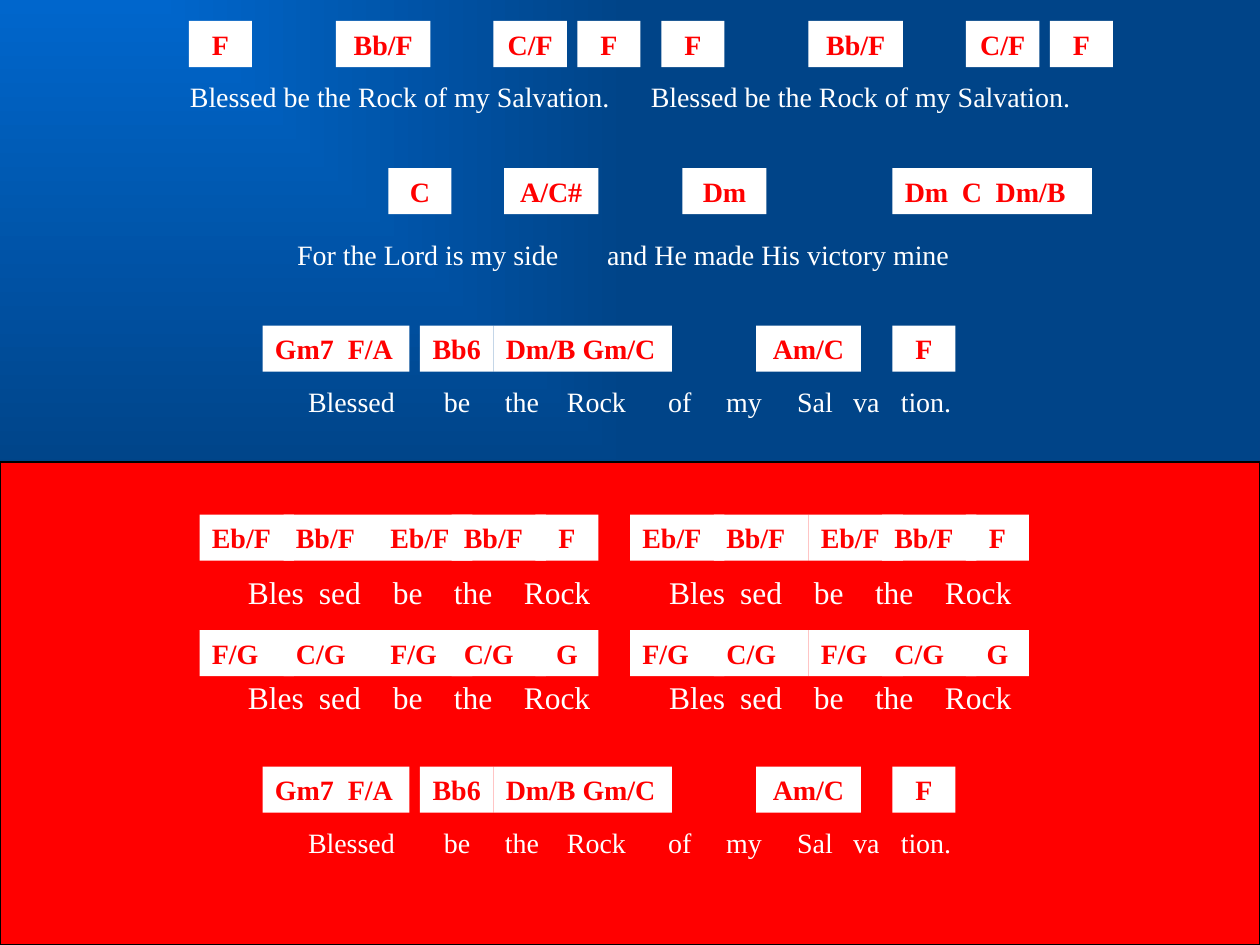
from lxml.etree import SubElement
from pptx import Presentation
from pptx.dml.color import RGBColor
from pptx.enum.shapes import MSO_SHAPE
from pptx.enum.text import MSO_ANCHOR, MSO_AUTO_SIZE, PP_ALIGN
from pptx.oxml.ns import qn
from pptx.util import Cm, Pt

FONT = "Times New Roman"
RED, WHITE, BLACK = "FF0000", "FFFFFF", "000000"
SKY, NAVY = "0066CC", "004488"
UNIT = 2.54 / 12
INSET = 0.25
LEFT, MID = PP_ALIGN.LEFT, PP_ALIGN.CENTER

BLESS = "Blessed be the Rock of my Salvation."
OPEN = [("F", 18, 6, MID), ("Bb/F", 32, 9, MID), ("C/F", 47, 7, MID), ("F", 55, 6, MID)]
LORD = [("C", 37, 6, MID), ("A/C#", 48, 9, MID), ("Dm", 65, 8, MID),
        ("Dm\tC\tDm/B", 85, 19, LEFT, 1.15, 1.83)]
CLOSE = [("Gm7\tF/A", 25, 14, LEFT, 1.47), ("Bb6", 40, 7, MID),
         ("Dm/B Gm/C", 47, 17, LEFT), ("Am/C", 72, 10, MID), ("F", 85, 6, MID)]
END = [("Blessed", 6.21), ("be", 8.95), ("the", 10.18), ("Rock", 11.43), ("of", 13.47),
       ("my", 14.64), ("Sal", 16.07), ("va", 17.2), ("tion.", 18.16)]
ROCK = [("Bles", 5), ("sed", 6.43), ("be", 7.92), ("the", 9.15), ("Rock", 10.56)]


def twice(row, step):
    return row + [(item[0], item[1] + step, *item[2:]) for item in row]


def vamp(one, two, last):
    row = [(one, 19, 9, LEFT), (two, 27, 9, LEFT), (one, 36, 9, LEFT),
           (two, 43, 9, LEFT), (last, 51, 6, MID)]
    return twice(row, 41)


ROCKS = twice(ROCK, 8.49)
LINES = [
    (2, twice(OPEN, 45), 7, 16, [(BLESS, 3.83), (BLESS, 13.12)]),
    (16, LORD, 22, 16, [("For the Lord is my side", 5.99),
                        ("and He made His victory mine", 12.24)]),
    (31, CLOSE, 36, 16, END),
    (49, vamp("Eb/F", "Bb/F", "F"), 54, 18, ROCKS),
    (60, vamp("F/G", "C/G", "G"), 64, 18, ROCKS),
    (73, CLOSE, 78, 16, END),
]


def tint(code):
    return RGBColor.from_string(code)


def grid(*cells):
    return [Cm(cell * UNIT) for cell in cells]


def write(shape, text, size, color, bold, align, stops):
    frame = shape.text_frame
    frame.word_wrap = True
    frame.auto_size = MSO_AUTO_SIZE.SHAPE_TO_FIT_TEXT
    frame.vertical_anchor = MSO_ANCHOR.TOP
    para = frame.paragraphs[0]
    para.alignment = align
    if stops:
        tabs = SubElement(para._p.get_or_add_pPr(), qn("a:tabLst"))
        for stop in stops:
            SubElement(tabs, qn("a:tab"), pos=str(Cm(stop)), algn="l")
    run = para.add_run()
    run.text = text
    run.font.name = FONT
    run.font.size = Pt(size)
    run.font.bold = bold
    run.font.color.rgb = tint(color)


def block(slide, cells, color):
    shape = slide.shapes.add_shape(MSO_SHAPE.RECTANGLE, *grid(*cells))
    shape.shadow.inherit = False
    shape.fill.solid()
    shape.fill.fore_color.rgb = tint(color)
    shape.line.fill.background()
    return shape


def paint(slide):
    fill = slide.background.fill
    fill.gradient()
    for stop, color in zip(fill.gradient_stops, (SKY, NAVY)):
        stop.color.rgb = tint(color)
    grad = slide._element.find(".//" + qn("a:gradFill"))
    grad.remove(grad.find(qn("a:lin")))
    form = SubElement(grad, qn("a:path"), {"path": "rect"})
    SubElement(form, qn("a:fillToRect"), r="100000", b="100000")


def main():
    deck = Presentation()
    deck.slide_width, deck.slide_height = Cm(25.4), Cm(19.05)
    slide = deck.slides.add_slide(deck.slide_layouts[6])
    paint(slide)
    panel = block(slide, (0, 44, 120, 46), RED)
    panel.line.color.rgb = tint(BLACK)
    panel.line.width = Pt(0.75)
    for top, chords, base, size, words in LINES:
        box = slide.shapes.add_textbox(*grid(0, base, 120, size * 0.275))
        text = "".join("\t" + word for word, left in words)
        write(box, text, size, WHITE, False, LEFT, [left - INSET for word, left in words])
        for name, left, width, align, *stops in chords:
            chord = block(slide, (left, top, width, 4.4), WHITE)
            write(chord, name, 16, RED, True, align, stops)
    deck.save("out.pptx")


if __name__ == "__main__":
    main()
